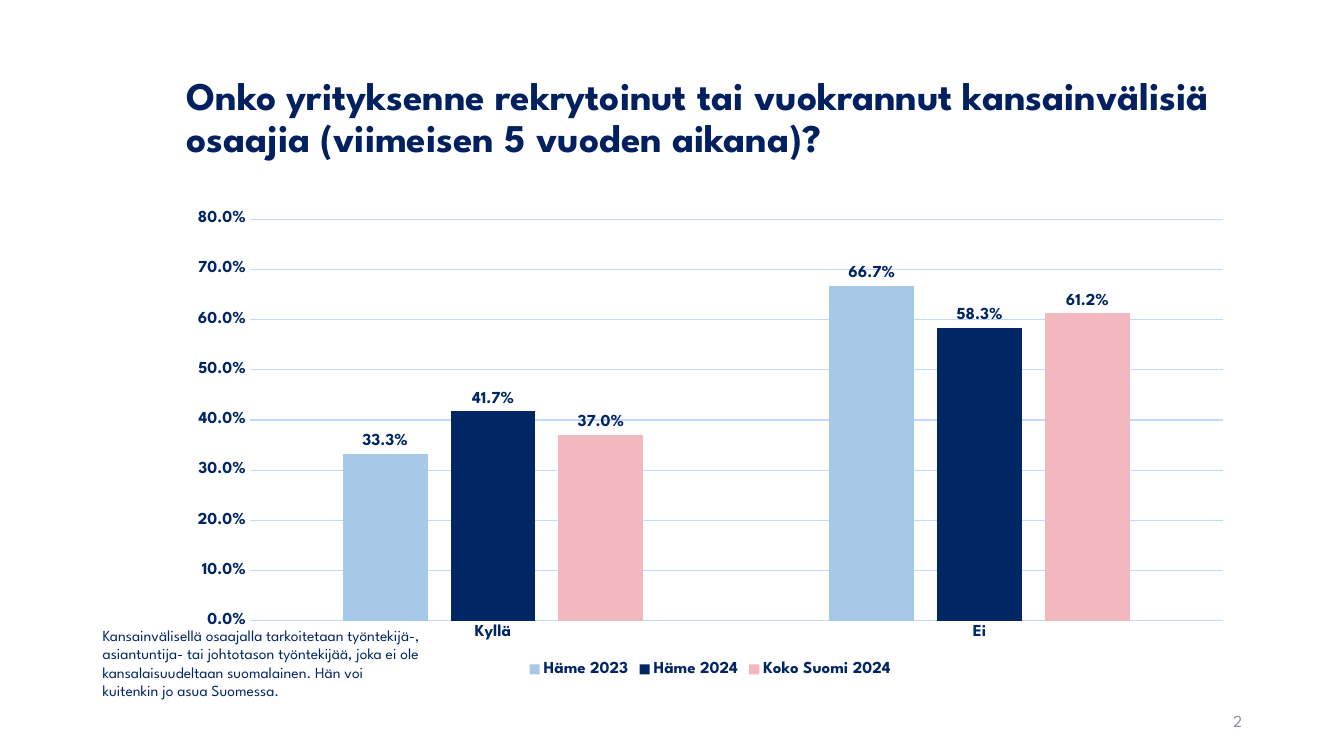
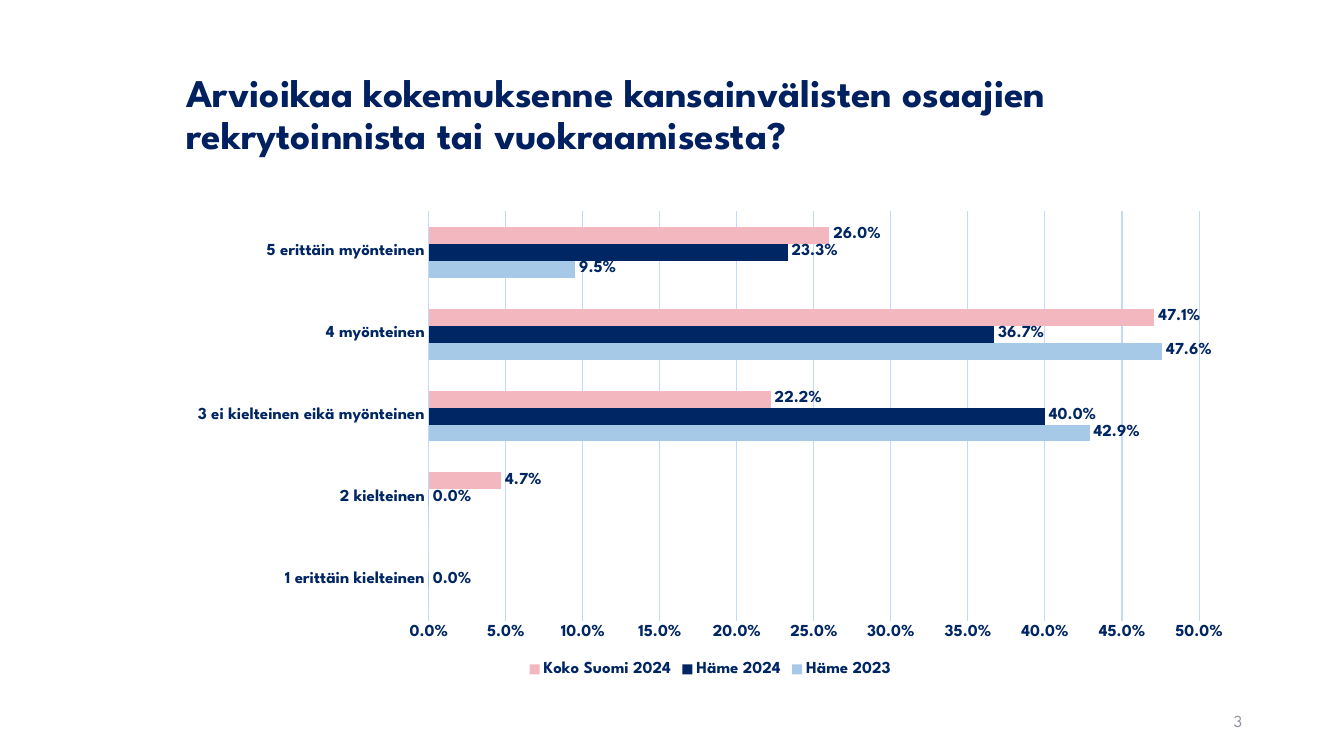
from pptx import Presentation
from pptx.chart.data import CategoryChartData
from pptx.dml.color import RGBColor
from pptx.enum.chart import XL_CHART_TYPE, XL_LABEL_POSITION, XL_LEGEND_POSITION, XL_TICK_MARK
from pptx.enum.text import MSO_ANCHOR, MSO_AUTO_SIZE, PP_ALIGN
from pptx.oxml.xmlchemy import OxmlElement
from pptx.util import Inches, Pt

COLUMNS = XL_CHART_TYPE.COLUMN_CLUSTERED
BARS = XL_CHART_TYPE.BAR_CLUSTERED
OUTSIDE_END = XL_LABEL_POSITION.OUTSIDE_END
LEGEND_BOTTOM = XL_LEGEND_POSITION.BOTTOM
NO_TICKS = XL_TICK_MARK.NONE
MIDDLE, TOP = MSO_ANCHOR.MIDDLE, MSO_ANCHOR.TOP
NO_AUTOFIT = MSO_AUTO_SIZE.NONE
LEFT, RIGHT = PP_ALIGN.LEFT, PP_ALIGN.RIGHT

FONT = "League Spartan"
TITLE_NAVY = "002060"
NAVY = "002663"
GRID_BLUE = "C1D9FF"
NUMBER_GREY = "8C8E9F"
SERIES_COLORS = {"Häme 2023": "A5C9E7", "Häme 2024": NAVY, "Koko Suomi 2024": "F2B7BF"}
PERCENT = "0.0%"
TITLE_ONLY = 5

CHART_BOX = (1.75, 2, 10.59, 4.76)
NUMBER_BOX = (9.42, 6.95, 3, 0.4)
DEFINITION_BOX = (0.92, 6.16, 3.36, 1.21)


def rgb(color):
    """Turn a hex string into a colour."""
    return RGBColor.from_string(color)


def inches(box):
    """Turn left, top, width and height into lengths."""
    return [Inches(length) for length in box]


def style_font(font, size, color, bold=False):
    """Apply the deck's typeface with a size, colour and weight."""
    font.name = FONT
    font.size = Pt(size)
    font.bold = bold
    font.color.rgb = rgb(color)


def write_text(frame, text, size, color, bold=False, align=LEFT, anchor=TOP):
    """Fill a text frame with one styled paragraph."""
    frame.word_wrap = True
    frame.auto_size = NO_AUTOFIT
    frame.vertical_anchor = anchor
    frame.text = text
    paragraph = frame.paragraphs[0]
    paragraph.alignment = align
    style_font(paragraph.font, size, color, bold)
    return paragraph


def add_text(slide, box, text, size, color, **style):
    """Add a text box with one styled paragraph."""
    write_text(slide.shapes.add_textbox(*inches(box)).text_frame, text, size, color, **style)


def add_question_slide(prs, question, number, title_top):
    """Add a slide with a question as title and a slide number."""
    slide = prs.slides.add_slide(prs.slide_layouts[TITLE_ONLY])
    title = slide.shapes.title
    title.left, title.top, title.width, title.height = inches((1.75, title_top, 10.59, 1.3))
    heading = write_text(title.text_frame, question, 28, TITLE_NAVY, bold=True, anchor=MIDDLE)
    heading.line_spacing = 0.9
    add_text(slide, NUMBER_BOX, str(number), 12, NUMBER_GREY, align=RIGHT, anchor=MIDDLE)
    return slide


def style_line(line):
    """Give an axis or grid line the pale blue stroke."""
    line.color.rgb = rgb(GRID_BLUE)
    line.width = Pt(0.75)


def style_axes(chart, maximum, step):
    """Format the category axis and the percentage axis."""
    for axis in (chart.category_axis, chart.value_axis):
        axis.major_tick_mark = axis.minor_tick_mark = NO_TICKS
        style_font(axis.tick_labels.font, 12, NAVY, bold=True)
    style_line(chart.category_axis.format.line)
    shares = chart.value_axis
    shares.minimum_scale, shares.maximum_scale, shares.major_unit = 0, maximum, step
    shares.tick_labels.number_format = PERCENT
    shares.tick_labels.number_format_is_linked = False
    shares.format.line.fill.background()
    shares.has_major_gridlines = True
    style_line(shares.major_gridlines.format.line)


def hide_label(labels, position, point):
    """Remove the label of one point in a series."""
    label = OxmlElement("c:dLbl")
    for tag, value in (("c:idx", point), ("c:delete", 1)):
        part = OxmlElement(tag)
        part.set("val", str(value))
        label.append(part)
    labels._element.insert(position, label)


def style_series(series, hidden_points):
    """Colour a series and label its values."""
    series.format.fill.solid()
    series.format.fill.fore_color.rgb = rgb(SERIES_COLORS[series.name])
    series.invert_if_negative = False
    labels = series.data_labels
    labels.show_value = True
    labels.position = OUTSIDE_END
    labels.number_format = PERCENT
    labels.number_format_is_linked = False
    style_font(labels.font, 12, NAVY, bold=True)
    for position, point in enumerate(hidden_points):
        hide_label(labels, position, point)


def add_share_chart(slide, box, kind, answers, shares, maximum, step, gap, overlap=0, hidden=None):
    """Add a clustered chart comparing the areas' answer shares."""
    data = CategoryChartData(number_format=PERCENT)
    data.categories = answers
    for area, values in zip(SERIES_COLORS, shares):
        data.add_series(area, values)
    chart = slide.shapes.add_chart(kind, *inches(box), data).chart
    chart.has_title = False
    style_font(chart.font, 12, NAVY, bold=True)
    chart.has_legend = True
    chart.legend.position = LEGEND_BOTTOM
    chart.legend.include_in_layout = False
    style_font(chart.legend.font, 12, NAVY, bold=True)
    style_axes(chart, maximum, step)
    plot = chart.plots[0]
    plot.vary_by_categories = False
    plot.gap_width, plot.overlap = gap, overlap
    for series in plot.series:
        style_series(series, (hidden or {}).get(series.name, ()))


def build_recruitment(prs):
    """Build the slide on whether companies have recruited."""
    slide = add_question_slide(
        prs,
        "Onko yrityksenne rekrytoinut tai vuokrannut kansainvälisiä osaajia "
        "(viimeisen 5 vuoden aikana)?",
        2, 0.53)
    add_share_chart(
        slide, CHART_BOX, COLUMNS, ["Kyllä", "Ei"],
        [(0.333, 0.667), (0.417, 0.583), (0.37, 0.612)],
        maximum=0.8, step=0.1, gap=219, overlap=-27)
    add_text(
        slide, DEFINITION_BOX,
        "Kansainvälisellä osaajalla tarkoitetaan työntekijä-, asiantuntija- tai johtotason "
        "työntekijää, joka ei ole kansalaisuudeltaan suomalainen. Hän voi kuitenkin jo asua "
        "Suomessa.",
        11, NAVY)


def build_experience(prs):
    """Build the slide on how companies rate the experience."""
    slide = add_question_slide(
        prs,
        "Arvioikaa kokemuksenne kansainvälisten osaajien rekrytoinnista tai vuokraamisesta?",
        3, 0.5)
    add_share_chart(
        slide, CHART_BOX, BARS,
        ["1 erittäin kielteinen", "2 kielteinen", "3 ei kielteinen eikä myönteinen",
         "4 myönteinen", "5 erittäin myönteinen"],
        [(0, 0, 0.429, 0.476, 0.095), (0, 0, 0.4, 0.367, 0.233),
         (0, 0.047, 0.222, 0.471, 0.26)],
        maximum=0.5, step=0.05, gap=182,
        hidden={"Häme 2023": (0, 1), "Koko Suomi 2024": (0,)})


def main():
    """Build and save the presentation."""
    prs = Presentation()
    prs.slide_width, prs.slide_height = Inches(13.33), Inches(7.5)
    build_recruitment(prs)
    build_experience(prs)
    prs.save("out.pptx")


if __name__ == "__main__":
    main()
